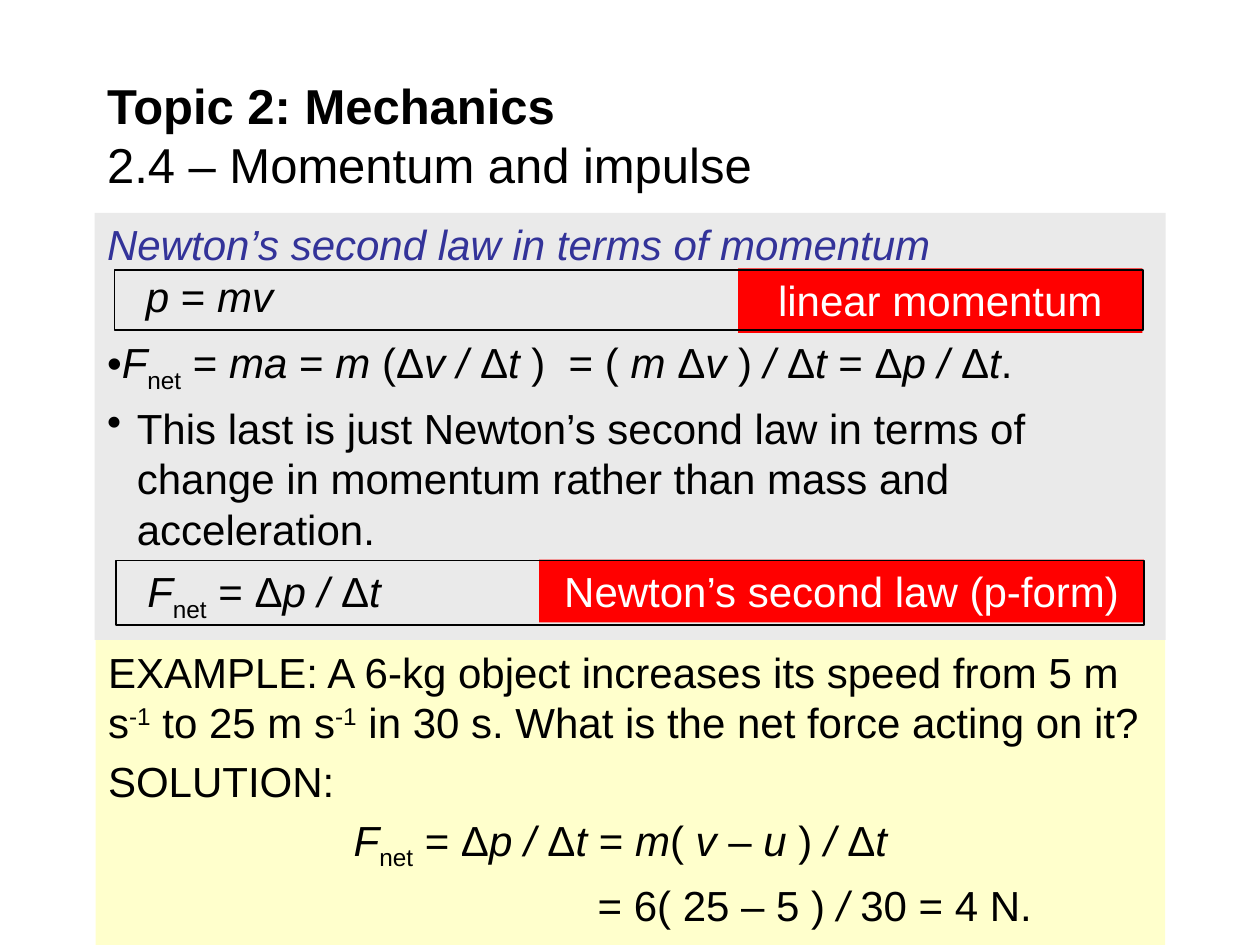
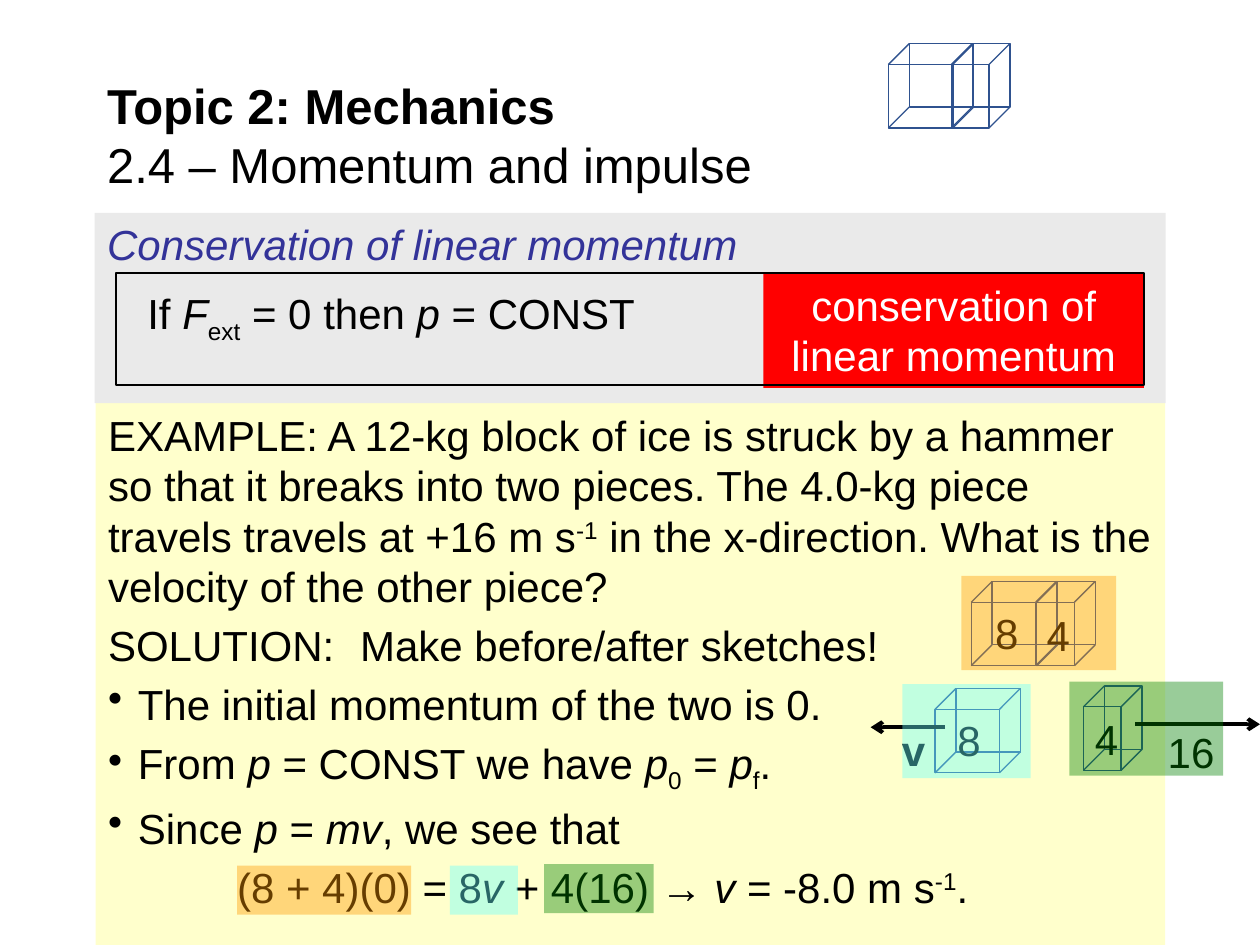
from lxml.etree import SubElement
from pptx import Presentation
from pptx.dml.color import RGBColor
from pptx.enum.shapes import MSO_CONNECTOR as Connector, MSO_SHAPE as Shape
from pptx.enum.text import MSO_ANCHOR as Anchor, PP_ALIGN as Align
from pptx.oxml.ns import qn
from pptx.util import Cm, Pt

color = RGBColor.from_string
BLACK, WHITE, RED = "000000", "FFFFFF", "FF0000"
GREY, YELLOW, INDIGO = "EAEAEA", "FFFFCC", "333399"
ORANGE, CYAN, GREEN, CUBE_BLUE = "FF9900", "66FFFF", "008000", "2F528F"
BULLET = {"left": 0.6, "first": -0.6, "bullet": "•"}
HEADING = {"color": INDIGO}
LABEL = {"color": WHITE, "alignment": Align.CENTER}
FORMULA = {"line_spacing": 0.9}


def write(box, lines):
    frame = box.text_frame
    frame.word_wrap = True
    for index, (text, style) in enumerate(lines):
        para = frame.paragraphs[0] if index == 0 else frame.add_paragraph()
        layout = {"alignment": Align.LEFT, "space_before": Pt(4.8), "line_spacing": 1.0}
        for name in layout:
            setattr(para, name, style.get(name, layout[name]))
        properties = para._p.get_or_add_pPr()
        properties.set("marL", str(Cm(style.get("left", 0))))
        properties.set("indent", str(Cm(style.get("first", 0))))
        if "bullet" in style:
            SubElement(properties, qn("a:buChar")).set("char", style["bullet"])
        for i, piece in enumerate(text.split("*")):
            for j, part in enumerate(piece.split("_")):
                for k, words in enumerate(part.split("^")):
                    if not words:
                        continue
                    span = para.add_run()
                    span.text = words
                    font = {"name": "Arial", "size": Pt(style.get("size", 24)),
                            "bold": style.get("bold", False), "italic": i % 2 == 1}
                    for name, value in font.items():
                        setattr(span.font, name, value)
                    span.font.color.rgb = color(style.get("color", BLACK))
                    shift = -25000 * (j % 2) + 30000 * (k % 2)
                    if shift:
                        span.font._element.set("baseline", str(shift))


def place(page, at, fill=None, line=None, alpha=None, lines=()):
    box = page.shapes.add_shape(Shape.RECTANGLE, *map(Cm, at))
    box.shadow.inherit = False
    box.text_frame.vertical_anchor = Anchor.TOP
    box.fill.background()
    box.line.fill.background()
    if fill:
        box.fill.solid()
        box.fill.fore_color.rgb = color(fill)
    if alpha:
        tone = box.fill._xPr.find(qn("a:solidFill"))[0]
        SubElement(tone, qn("a:alpha")).set("val", str(alpha * 1000))
    if line:
        box.line.color.rgb = color(line)
        box.line.width = Pt(1)
    write(box, lines)


deck = Presentation()
deck.slide_width, deck.slide_height = Cm(25.4), Cm(19.05)

law_lines = [
    ("*Newton’s second law in terms of momentum*", HEADING),
    ("•*F*_net_ = *ma* = *m *(Δ*v / *Δ*t *)  = ( *m *Δ*v *) */ *Δ*t *= Δ*p / *Δ*t*.",
     {"space_before": Pt(38.4)}),
    ("This last is just Newton’s second law in terms of change in momentum "
     "rather than mass and acceleration.", BULLET),
]
force_lines = [
    ("EXAMPLE: A 6-kg object increases its speed from 5 m s^-1^ to 25 m s^-1^ in 30 s. "
     "What is the net force acting on it?", {}),
    ("SOLUTION:", {}),
    ("*F*_net_ = Δ*p / *Δ*t* = *m*( *v* – *u *) */ *Δ*t*", {"left": 4.95}),
    ("= 6( 25 – 5 ) */* 30 = 4 N.", {"left": 9.87}),
]
ice_lines = [
    ("EXAMPLE: A 12-kg block of ice is struck by a hammer so that it breaks into two "
     "pieces. The 4.0-kg piece travels travels at +16 m s^-1^ in the x-direction. "
     "What is the velocity of the other piece?", {}),
    ("SOLUTION:\tMake before/after sketches!", {}),
    ("The initial momentum of the two is 0.", BULLET),
    ("From *p* = CONST we have* p*_0_ = *p*_f_.", BULLET),
    ("Since *p* = *mv*, we see that", BULLET),
    ("(8 + 4)(0) = 8*v* + 4(16) → *v* = -8.0 m s^-1^.", {"left": 2.6}),
]
slides = [
    (12.9, law_lines, force_lines, [
        ("*p *= *mv*", (2.69, 5.44, 6.88, 0.89), "linear momentum",
         (14.88, 5.41, 8.15, 1.3), (2.31, 5.44, 20.73, 1.22)),
        ("*F*_net_ = Δ*p / *Δ*t*", (2.72, 11.3, 6.88, 0.89), "Newton’s second law (p-form)",
         (10.87, 11.28, 12.19, 1.27), (2.34, 11.3, 20.73, 1.3)),
    ]),
    (8.13, [("*Conservation of linear momentum*", HEADING)], ice_lines, [
        ("If *F*_ext_ = 0 then *p* = CONST", (2.72, 5.69, 11.68, 0.89),
         "conservation of linear momentum",
         (15.39, 5.51, 7.67, 2.31), (2.34, 5.51, 20.73, 2.26)),
    ]),
]

for split, theory, example, formulas in slides:
    page = deck.slides.add_slide(deck.slide_layouts[6])
    title = page.shapes.add_textbox(*map(Cm, (1.91, 1.47, 21.59, 2.49)))
    title.text_frame.vertical_anchor = Anchor.MIDDLE
    write(title, [("Topic 2: Mechanics", {"size": 28, "bold": True, "space_before": Pt(0)}),
                  ("2.4 – Momentum and impulse", {"size": 28, "space_before": Pt(0)})])
    place(page, (1.93, split, 21.56, 19.05 - split), YELLOW, lines=example)
    place(page, (1.91, 4.29, 21.59, split - 4.29), GREY, lines=theory)
    for formula, formula_at, label, label_at, frame_at in formulas:
        write(page.shapes.add_textbox(*map(Cm, formula_at)), [(formula, FORMULA)])
        place(page, label_at, RED, lines=[(label, LABEL)])
        place(page, frame_at, line=BLACK)

depth, height = Cm(0.42), Cm(1.28)
cubes = [(17.91, 1.3, 1.3), (19.18, 1.3, 0.76), (19.58, 12.14, 1.3),
         (20.9, 12.14, 0.76), (18.85, 14.3, 1.3), (21.84, 14.25, 0.76)]
for cube in cubes:
    x, y, width = map(Cm, cube)
    front = [(x, y), (x + width, y), (x + width, y + height), (x, y + height)]
    back = [(left + depth, top - depth) for left, top in front]
    outline = page.shapes.build_freeform(*front[0])
    outline.add_line_segments(front[1:], close=True)
    outline.move_to(*back[0])
    outline.add_line_segments(back[1:], close=True)
    for near, far in zip(front, back):
        outline.move_to(*near)
        outline.add_line_segments([far], close=False)
    block = outline.convert_to_shape()
    block.shadow.inherit = False
    block.fill.background()
    block.line.color.rgb = color(CUBE_BLUE)
    block.line.width = Pt(0.75)

for text, left, top, width, bold in [
    ("8", 19.81, 12.12, 1.02, False), ("4", 20.85, 12.17, 1.02, False),
    ("8", 19.05, 14.27, 1.02, False), ("4", 21.82, 14.25, 1.02, False),
    ("16", 23.29, 14.53, 1.47, False), ("v", 17.93, 14.48, 1.02, True),
]:
    mark = page.shapes.add_textbox(Cm(left), Cm(top), Cm(width), Cm(1.27))
    write(mark, [(text, {"bold": bold})])

for start, end, top in [(22.89, 25.4, 14.6), (19.05, 17.55, 14.66)]:
    arrow = page.shapes.add_connector(Connector.STRAIGHT, Cm(start), Cm(top), Cm(end), Cm(top))
    arrow.line.color.rgb = color(BLACK)
    arrow.line.width = Pt(2.25)
    SubElement(arrow.line._get_or_add_ln(), qn("a:tailEnd")).set("type", "arrow")
    SubElement(arrow._element.spPr, qn("a:effectLst"))

for tint, at in [
    (ORANGE, (19.38, 11.61, 3.12, 1.9)), (ORANGE, (4.78, 17.45, 3.51, 0.99)),
    (CYAN, (9.07, 17.45, 1.37, 0.99)), (CYAN, (18.19, 13.79, 2.59, 1.9)),
    (GREEN, (10.97, 17.42, 2.21, 0.99)), (GREEN, (21.56, 13.74, 3.1, 1.9)),
]:
    place(page, at, tint, alpha=40)

deck.save("out.pptx")
